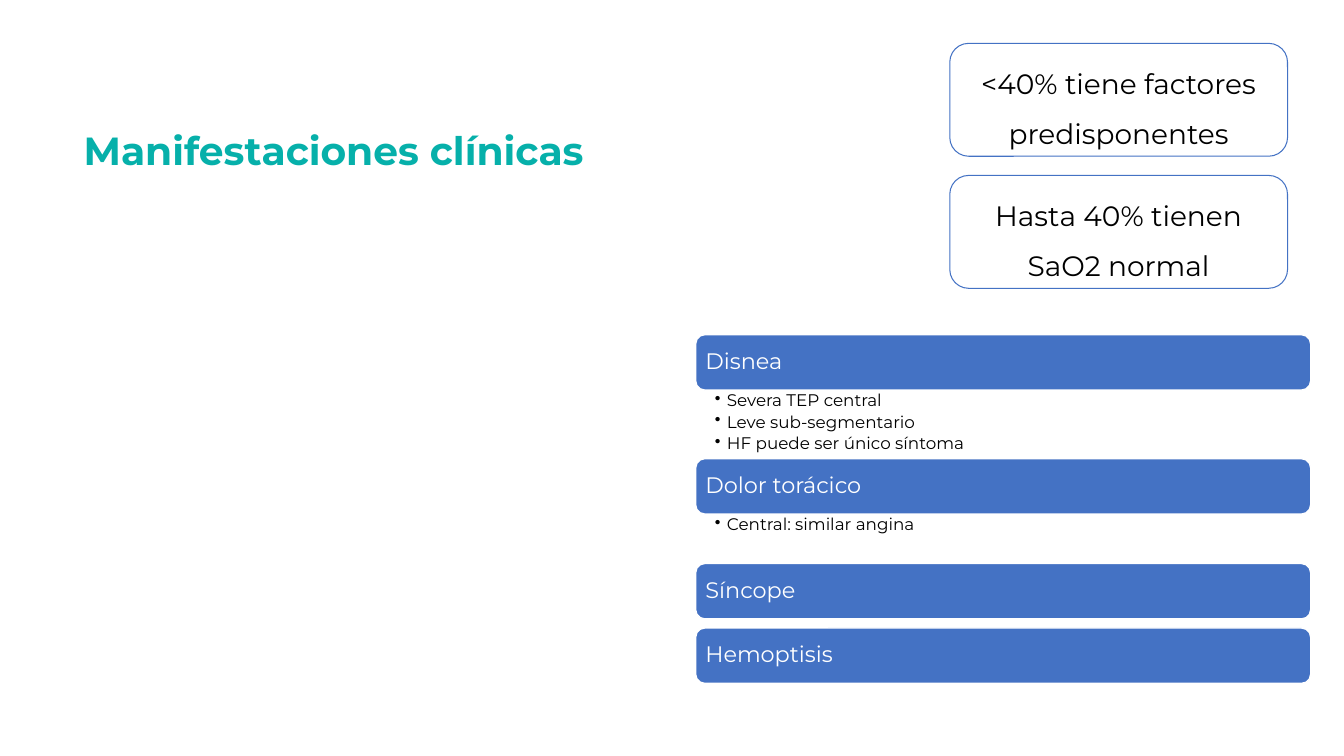
from lxml import etree
from pptx import Presentation
from pptx.dml.color import RGBColor
from pptx.enum.shapes import MSO_SHAPE
from pptx.enum.text import MSO_ANCHOR, PP_ALIGN
from pptx.oxml.ns import qn
from pptx.util import Inches, Pt

ROUND = MSO_SHAPE.ROUNDED_RECTANGLE
TOP, MIDDLE = MSO_ANCHOR.TOP, MSO_ANCHOR.MIDDLE
LEFT, CENTER = PP_ALIGN.LEFT, PP_ALIGN.CENTER
FONT = "Montserrat"
TEAL = RGBColor(0x06, 0xB0, 0xAA)
BLUE = RGBColor(0x44, 0x72, 0xC4)
WHITE = RGBColor(0xFF, 0xFF, 0xFF)
BLACK = RGBColor(0, 0, 0)

# Content
TITLE = "Manifestaciones clínicas"
FACTS = ["<40% tiene factores predisponentes", "Hasta 40% tienen SaO2 normal"]
# Symptom, details, space below the bar
SIGNS = [
    ("Disnea", ["Severa TEP central", "Leve sub-segmentario",
                "HF puede ser único síntoma"], 0.68),
    ("Dolor torácico", ["Central: similar angina"], 0.49),
    ("Síncope", [], 0.09),
    ("Hemoptisis", [], 0),
]

# Layout in inches
FACT_X, FACT_Y, FACT_W, FACT_H, FACT_STEP = 9.42, 0.43, 3.35, 1.12, 1.31
BAR_X, BAR_Y, BAR_W, BAR_H = 6.9, 3.32, 6.1, 0.55


def set_frame(frame, anchor, pads):
    frame.word_wrap = True
    frame.vertical_anchor = anchor
    (frame.margin_left, frame.margin_top,
     frame.margin_right, frame.margin_bottom) = map(Inches, pads)


def write(para, text, size, color, spacing=0.9, align=LEFT, bold=False):
    para.alignment = align
    para.line_spacing = spacing
    run = para.add_run()
    run.text = text
    font = run.font
    font.name, font.size, font.bold = FONT, Pt(size), bold
    font.color.rgb = color


def add_round(x, y, w, h, fill, line, width):
    box = slide.shapes.add_shape(ROUND, Inches(x), Inches(y), Inches(w), Inches(h))
    box.shadow.inherit = False
    if fill is None:
        box.fill.background()
    else:
        box.fill.solid()
        box.fill.fore_color.rgb = fill
    box.line.color.rgb = line
    box.line.width = Pt(width)
    return box


def add_bullet(para):
    props = para._p.get_or_add_pPr()
    props.set("marL", str(Inches(0.12)))
    props.set("indent", str(-Inches(0.12)))
    etree.SubElement(props, qn("a:buChar")).set("char", "•")


def add_list(items, y, h):
    frame = slide.shapes.add_textbox(
        Inches(BAR_X), Inches(y), Inches(BAR_W), Inches(h)).text_frame
    set_frame(frame, TOP, (0.19, 0.02, 0.09, 0.02))
    for i, item in enumerate(items):
        para = frame.add_paragraph() if i else frame.paragraphs[0]
        add_bullet(para)
        para.space_after = Pt(2.4)
        write(para, item, 12, BLACK)


deck = Presentation()
deck.slide_width, deck.slide_height = Inches(13.33), Inches(7.5)
slide = deck.slides.add_slide(deck.slide_layouts[5])

# Title
title = slide.shapes.title
title.left, title.top = Inches(0.73), Inches(0.98)
title.width, title.height = Inches(11.88), Inches(1.07)
set_frame(title.text_frame, MIDDLE, (0.1, 0.05, 0.1, 0.05))
write(title.text_frame.paragraphs[0], TITLE, 28, TEAL, bold=True)

# Symptom bars with their details
y = BAR_Y
for name, items, space in SIGNS:
    bar = add_round(BAR_X, y, BAR_W, BAR_H, BLUE, WHITE, 1)
    set_frame(bar.text_frame, MIDDLE, (0.07,) * 4)
    write(bar.text_frame.paragraphs[0], name, 16, WHITE)
    y += BAR_H
    if items:
        add_list(items, y, space)
    y += space

# Key facts
for i, fact in enumerate(FACTS):
    box = add_round(FACT_X, FACT_Y + i * FACT_STEP, FACT_W, FACT_H, None, BLUE, 0.75)
    set_frame(box.text_frame, MIDDLE, (0,) * 4)
    write(box.text_frame.paragraphs[0], fact, 20, BLACK, 1.5, CENTER)

deck.save("out.pptx")
